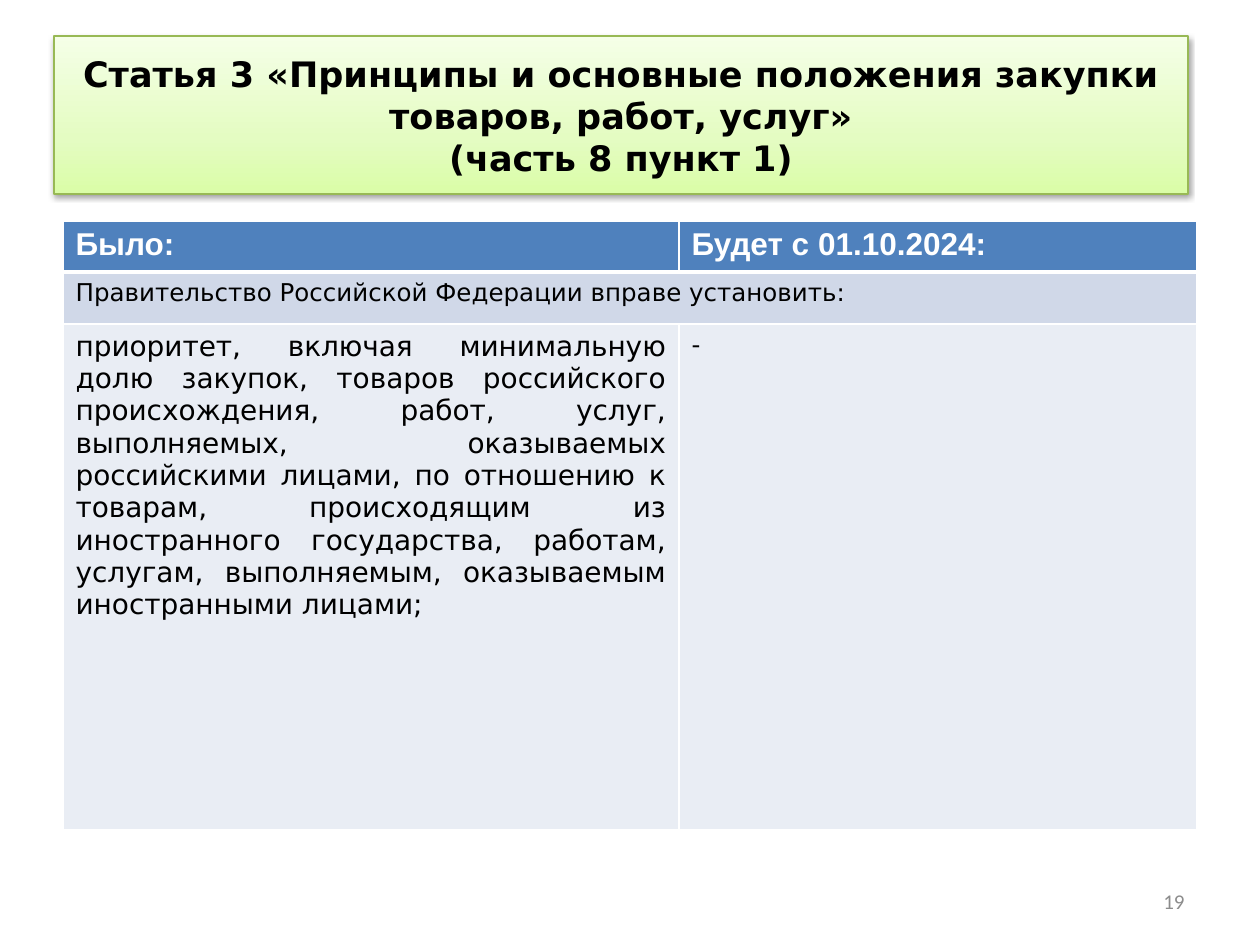
from copy import deepcopy

from lxml.etree import SubElement
from pptx import Presentation
from pptx.dml.color import RGBColor
from pptx.enum.text import MSO_ANCHOR, MSO_AUTO_SIZE, PP_ALIGN
from pptx.oxml import parse_xml
from pptx.oxml.ns import nsdecls, qn
from pptx.util import Pt

SCALE = 914400 / 126
BLACK = RGBColor(0x00, 0x00, 0x00)
WHITE = RGBColor(0xFF, 0xFF, 0xFF)
GRAY = RGBColor(0x8C, 0x8C, 0x8C)
GREEN_LINE = RGBColor(0x98, 0xB9, 0x55)
HEADER_BLUE = RGBColor(0x4F, 0x81, 0xBD)
BAND_DARK = RGBColor(0xD0, 0xD8, 0xE8)
BAND_LIGHT = RGBColor(0xE9, 0xED, 0xF4)
TITLE_GRADIENT = [
    (0, RGBColor(0xDA, 0xFD, 0xA7)),
    (0.35, RGBColor(0xE4, 0xFC, 0xC2)),
    (1, RGBColor(0xF5, 0xFF, 0xE7)),
]

TITLE = ("Статья 3 «Принципы и основные положения закупки товаров, работ, услуг»"
         "\v(часть 8 пункт 1)")
HEADERS = ["Было:", "Будет с 01.10.2024:"]
INTRO = "Правительство Российской Федерации вправе установить:"
BEFORE = ("приоритет, включая минимальную долю закупок, товаров российского "
          "происхождения, работ, услуг, выполняемых, оказываемых российскими лицами, "
          "по отношению к товарам, происходящим из иностранного государства, работам, "
          "услугам, выполняемым, оказываемым иностранными лицами;")
AFTER = "-"
PAGE_NUMBER = "19"

TITLE_BOX = (54, 36, 1134, 158)
TABLE_BOX = (63, 221, 1134, 609)
NUMBER_BOX = (903, 876, 294, 50)
COLUMN_WIDTHS = [616, 518]
ROW_HEIGHTS = [51, 52, 506]
ROW_FILLS = [HEADER_BLUE, BAND_DARK, BAND_LIGHT]


def px(length):
    return round(length * SCALE)


def write(frame, text, size, font="DejaVu Sans", color=BLACK, bold=False,
          align=PP_ALIGN.LEFT):
    frame.text = text
    for para in frame.paragraphs:
        para.alignment = align
        for span in para.runs:
            span.font.size = Pt(size)
            span.font.name = font
            span.font.bold = bold
            span.font.color.rgb = color


def fill_gradient(shape, stops):
    """Run the stops from the bottom edge to the top."""
    shape.fill.gradient()
    shape.fill.gradient_angle = 90
    stop_list = shape.element.spPr.find(".//" + qn("a:gsLst"))
    while len(stop_list) < len(stops):
        stop_list.append(deepcopy(stop_list[0]))
    for stop, (position, color) in zip(shape.fill.gradient_stops, stops):
        stop.position = position
        stop.color.rgb = color


def add_shadow(shape):
    shape.element.spPr.append(parse_xml(
        f'<a:effectLst {nsdecls("a")}>'
        '<a:outerShdw blurRad="40000" dist="20000" dir="5400000" rotWithShape="0">'
        '<a:srgbClr val="000000"><a:alpha val="38000"/></a:srgbClr>'
        '</a:outerShdw></a:effectLst>'))


def set_borders(cell, top, bottom):
    """Draw white borders; top and bottom widths are in points."""
    properties = cell._tc.get_or_add_tcPr()
    for side, width in (("L", 1), ("R", 1), ("T", top), ("B", bottom)):
        line = SubElement(properties, qn(f"a:ln{side}"), w=str(Pt(width)))
        SubElement(SubElement(line, qn("a:solidFill")), qn("a:srgbClr"), val=str(WHITE))


def add_title(page):
    title = page.shapes.title
    title.left, title.top, title.width, title.height = map(px, TITLE_BOX)
    fill_gradient(title, TITLE_GRADIENT)
    title.line.color.rgb = GREEN_LINE
    title.line.width = Pt(0.75)
    add_shadow(title)
    frame = title.text_frame
    frame.auto_size = MSO_AUTO_SIZE.NONE
    frame.vertical_anchor = MSO_ANCHOR.MIDDLE
    write(frame, TITLE, 20, bold=True, align=PP_ALIGN.CENTER)


def add_comparison(page):
    table = page.shapes.add_table(len(ROW_HEIGHTS), len(COLUMN_WIDTHS),
                                  *map(px, TABLE_BOX)).table
    table.horz_banding = False
    for column, width in zip(table.columns, COLUMN_WIDTHS):
        column.width = px(width)
    for index, (row, height) in enumerate(zip(table.rows, ROW_HEIGHTS)):
        row.height = px(height)
        for cell in row.cells:
            set_borders(cell, top=3 if index == 1 else 1, bottom=3 if index == 0 else 1)
            cell.fill.solid()
            cell.fill.fore_color.rgb = ROW_FILLS[index]
    for column, header in enumerate(HEADERS):
        write(table.cell(0, column).text_frame, header, 18, "Arial", WHITE, bold=True)
    table.cell(1, 0).merge(table.cell(1, 1))
    write(table.cell(1, 0).text_frame, INTRO, 14)
    write(table.cell(2, 0).text_frame, BEFORE, 16, align=PP_ALIGN.JUSTIFY)
    write(table.cell(2, 1).text_frame, AFTER, 14)


def add_page_number(page):
    frame = page.shapes.add_textbox(*map(px, NUMBER_BOX)).text_frame
    frame.word_wrap = True
    frame.vertical_anchor = MSO_ANCHOR.MIDDLE
    write(frame, PAGE_NUMBER, 12, "Calibri", GRAY, align=PP_ALIGN.RIGHT)


def main():
    deck = Presentation()
    deck.slide_width, deck.slide_height = px(1260), px(945)
    page = deck.slides.add_slide(deck.slide_layouts[5])
    add_title(page)
    add_comparison(page)
    add_page_number(page)
    deck.save("out.pptx")


if __name__ == "__main__":
    main()
